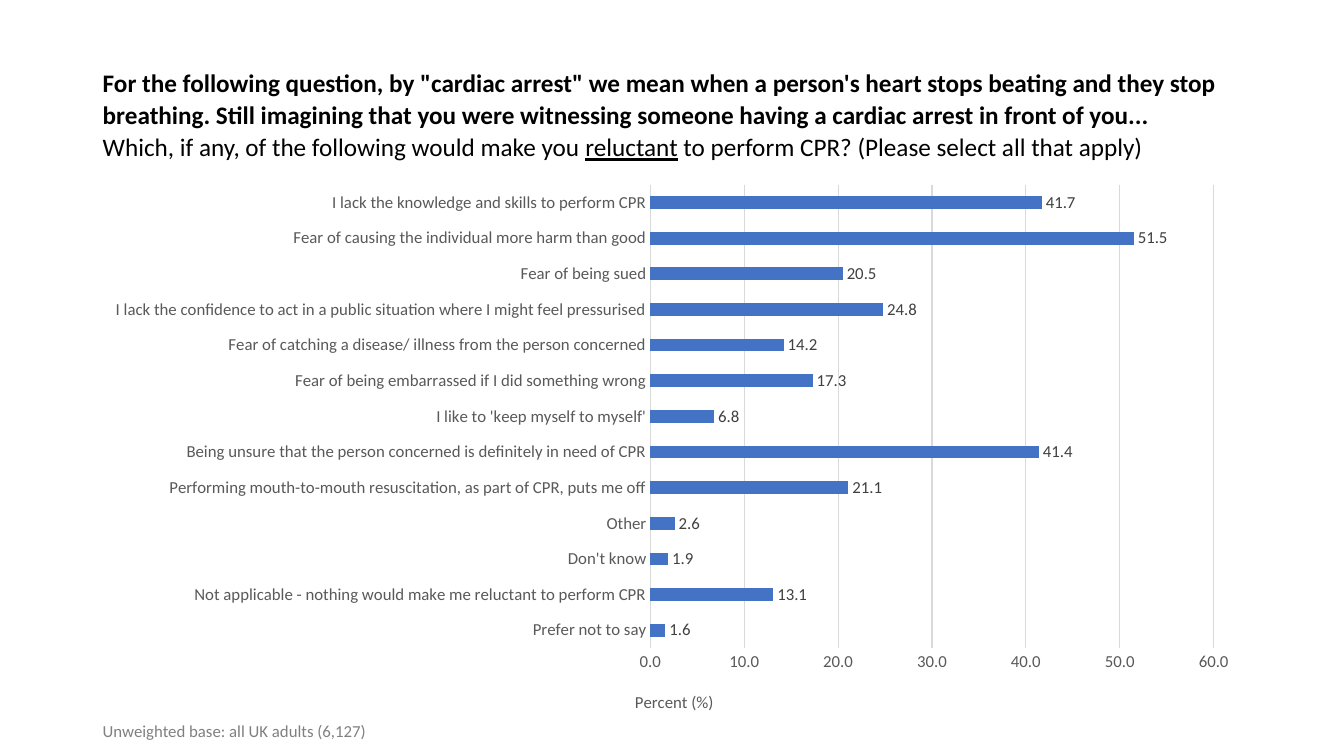
from lxml.etree import SubElement
from pptx import Presentation
from pptx.chart.data import CategoryChartData
from pptx.dml.color import RGBColor
from pptx.enum.chart import XL_CHART_TYPE as ChartType, XL_LABEL_POSITION as LabelSpot, XL_TICK_MARK as Tick
from pptx.enum.text import MSO_ANCHOR as Anchor
from pptx.oxml import parse_xml
from pptx.oxml.ns import nsdecls, qn
from pptx.util import Cm, Pt

FACE = "Calibri"
INTRO = (
    "For the following question, by \"cardiac arrest\" we mean when a person's heart stops "
    "beating and they stop breathing. Still imagining that you were witnessing someone "
    "having a cardiac arrest in front of you..."
)
QUESTION = [
    ("Which, if any, of the following would make you ", {}),
    ("reluctant", {"underline": True}),
    (" to perform CPR? (Please select all that apply)", {}),
]
REASONS = [
    ("Prefer not to say", 1.6),
    ("Not applicable - nothing would make me reluctant to perform CPR", 13.1),
    ("Don't know", 1.9),
    ("Other", 2.6),
    ("Performing mouth-to-mouth resuscitation, as part of CPR, puts me off", 21.1),
    ("Being unsure that the person concerned is definitely in need of CPR", 41.4),
    ("I like to 'keep myself to myself'", 6.8),
    ("Fear of being embarrassed if I did something wrong", 17.3),
    ("Fear of catching a disease/ illness from the person concerned", 14.2),
    ("I lack the confidence to act in a public situation where I might feel pressurised", 24.8),
    ("Fear of being sued", 20.5),
    ("Fear of causing the individual more harm than good", 51.5),
    ("I lack the knowledge and skills to perform CPR", 41.7),
]


def colour(hex_code):
    return RGBColor.from_string(hex_code)


def apply(target, settings):
    for name, value in settings.items():
        setattr(target, name, value)


def style_font(font, size, hex_code, **extra):
    apply(font, {"name": FACE, "size": Pt(size), **extra})
    font.color.rgb = colour(hex_code)


def style_line(line, hex_code):
    line.color.rgb = colour(hex_code)
    line.width = Pt(0.75)


def pin_layout(parent, index, settings):
    for old in parent.findall(qn("c:layout")):
        parent.remove(old)
    layout = parse_xml(f"<c:layout {nsdecls('c')}><c:manualLayout/></c:layout>")
    for tag, value in settings.items():
        SubElement(layout[0], qn(f"c:{tag}")).set("val", str(value))
    parent.insert(index, layout)


def add_heading(slide, box):
    frame = slide.shapes.add_textbox(*box).text_frame
    apply(frame, {"word_wrap": True, "vertical_anchor": Anchor.MIDDLE})
    paragraph = frame.paragraphs[0]
    apply(paragraph, {"line_spacing": 1.07, "space_after": Pt(8)})
    intro = paragraph.add_run()
    intro.text = INTRO
    style_font(intro.font, 18, "000000", bold=True)
    paragraph.add_line_break()
    for wording, emphasis in QUESTION:
        run = paragraph.add_run()
        run.text = wording
        style_font(run.font, 18, "000000", bold=False, **emphasis)


def add_reasons_chart(slide, box):
    data = CategoryChartData(number_format="0.0")
    data.categories = [reason for reason, _ in REASONS]
    data.add_series("Series 1", [percent for _, percent in REASONS])
    chart = slide.shapes.add_chart(ChartType.BAR_CLUSTERED, *box, data).chart
    apply(chart, {"has_legend": False, "has_title": False})
    style_font(chart.font, 12, "000000")

    bars = chart.plots[0]
    apply(bars, {"gap_width": 182, "vary_by_categories": False, "has_data_labels": True})
    fill = bars.series[0].format.fill
    fill.solid()
    fill.fore_color.rgb = colour("4472C4")
    apply(bars.data_labels, {
        "show_value": True, "position": LabelSpot.OUTSIDE_END,
        "number_format": "0.0", "number_format_is_linked": False,
    })
    style_font(bars.data_labels.font, 12, "404040")

    reasons, percents = chart.category_axis, chart.value_axis
    for axis in (reasons, percents):
        apply(axis, {"major_tick_mark": Tick.NONE, "minor_tick_mark": Tick.NONE})
        style_font(axis.tick_labels.font, 12, "595959")
    style_line(reasons.format.line, "D9D9D9")
    apply(percents, {
        "minimum_scale": 0, "maximum_scale": 60, "major_unit": 10, "has_major_gridlines": True,
    })
    percents.format.line.fill.background()
    style_line(percents.major_gridlines.format.line, "D9D9D9")
    apply(percents.tick_labels, {"number_format": "0.0", "number_format_is_linked": False})

    caption = percents.axis_title.text_frame.paragraphs[0]
    unit = caption.add_run()
    unit.text = "Percent (%)"
    style_font(unit.font, 12, "595959", bold=False)

    edges = {"xMode": "edge", "yMode": "edge"}
    pin_layout(percents.axis_title._element, 1, {**edges, "x": 0.465, "y": 0.925})
    pin_layout(chart._chartSpace.chart.plotArea, 0, {
        "layoutTarget": "inner", **edges, "x": 0.481, "y": 0.019, "w": 0.486, "h": 0.834,
    })


def add_base_note(slide, box):
    frame = slide.shapes.add_textbox(*box).text_frame
    frame.word_wrap = True
    note = frame.paragraphs[0].add_run()
    note.text = "Unweighted base: all UK adults (6,127)"
    style_font(note.font, 12, "808080")


def main():
    deck = Presentation()
    apply(deck, {"slide_width": Cm(33.87), "slide_height": Cm(19.05)})
    slide = deck.slides.add_slide(deck.slide_layouts[6])
    left, width = Cm(2.34), Cm(29.21)
    add_heading(slide, (left, Cm(1.02), width, Cm(3.68)))
    add_reasons_chart(slide, (left, Cm(4.39), width, Cm(14)))
    add_base_note(slide, (left, Cm(18.03), Cm(30.56), Cm(0.76)))
    deck.save("out.pptx")


if __name__ == "__main__":
    main()
